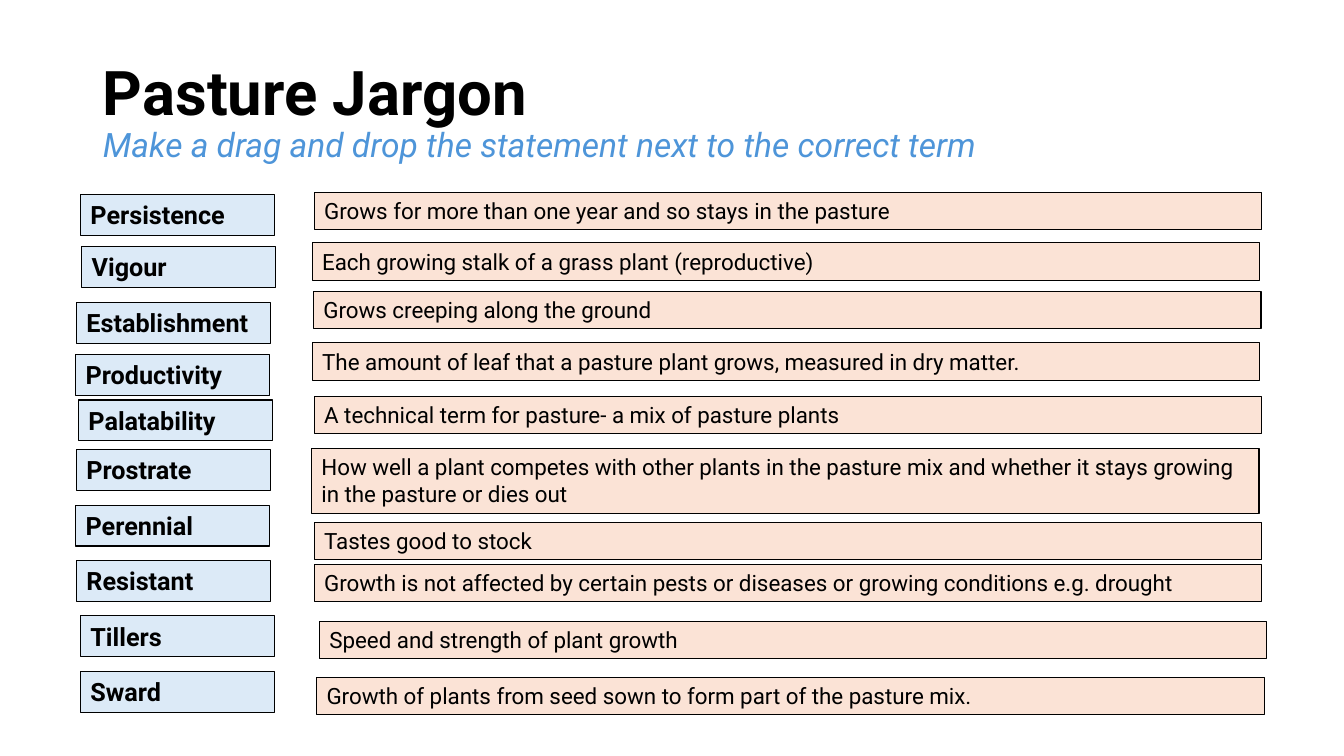
from dataclasses import dataclass

from pptx import Presentation
from pptx.dml.color import RGBColor
from pptx.enum.shapes import MSO_SHAPE as Shape
from pptx.enum.text import MSO_ANCHOR as Anchor
from pptx.enum.text import MSO_AUTO_SIZE as AutoSize
from pptx.enum.text import PP_ALIGN as Align
from pptx.util import Cm, Pt

# Content
TITLE = "Pasture Jargon"
INSTRUCTION = "Make a drag and drop the statement next to the correct term"

# Loose cards to drag: text, left and top in cm
TERMS = [
    ("Persistence", 2.03, 4.9),
    ("Vigour", 2.06, 6.22),
    ("Establishment", 1.93, 7.62),
    ("Productivity", 1.91, 8.94),
    ("Palatability", 1.98, 10.08),
    ("Prostrate", 1.93, 11.33),
    ("Perennial", 1.91, 12.73),
    ("Resistant", 1.93, 14.12),
    ("Tillers", 2.03, 15.52),
    ("Sward", 2.03, 16.92),
]

# Statement cards: text, left and top in cm, number of lines
STATEMENTS = [
    ("Grows for more than one year and so stays in the pasture", 7.92, 4.85, 1),
    ("Each growing stalk of a grass plant (reproductive)", 7.87, 6.12, 1),
    ("Grows creeping along the ground", 7.9, 7.34, 1),
    ("The amount of leaf that a pasture plant grows, measured in dry matter.", 7.87, 8.64, 1),
    ("A technical term for pasture- a mix of pasture plants", 7.92, 9.98, 1),
    ("How well a plant competes with other plants in the pasture mix and "
     "whether it stays growing in the pasture or dies out", 7.85, 11.3, 2),
    ("Tastes good to stock", 7.92, 13.16, 1),
    ("Growth is not affected by certain pests or diseases or growing "
     "conditions e.g. drought", 7.92, 14.22, 1),
    ("Speed and strength of plant growth", 8.05, 15.65, 1),
    ("Growth of plants from seed sown to form part of the pasture mix.", 7.98, 17.07, 1),
]

TERM_WIDTH, TERM_HEIGHT = 4.88, 1.03
STATEMENT_WIDTH = 23.88
STATEMENT_HEIGHT, EXTRA_LINE = 0.94, 0.69


@dataclass(frozen=True)
class Theme:
    font: str = "Roboto"
    text: RGBColor = RGBColor(0x00, 0x00, 0x00)
    instruction: RGBColor = RGBColor(0x4E, 0x95, 0xD9)
    term_fill: RGBColor = RGBColor(0xDC, 0xEA, 0xF7)
    statement_fill: RGBColor = RGBColor(0xFB, 0xE3, 0xD6)
    title_size: Pt = Pt(44)
    instruction_size: Pt = Pt(24)
    term_size: Pt = Pt(18)
    statement_size: Pt = Pt(16)
    outline: Pt = Pt(0.75)


THEME = Theme()


def add_run(paragraph, text, size, color=THEME.text, bold=False, italic=False):
    run = paragraph.add_run()
    run.text = text
    font = run.font
    font.name, font.size = THEME.font, size
    font.bold, font.italic = bold, italic
    font.color.rgb = color


def add_card(slide, text, box, fill, size, bold=False):
    card = slide.shapes.add_shape(Shape.RECTANGLE, *(Cm(length) for length in box))
    card.shadow.inherit = False
    card.fill.solid()
    card.fill.fore_color.rgb = fill
    card.line.color.rgb = THEME.text
    card.line.width = THEME.outline
    frame = card.text_frame
    frame.word_wrap = True
    frame.auto_size = AutoSize.SHAPE_TO_FIT_TEXT
    frame.vertical_anchor = Anchor.TOP
    paragraph = frame.paragraphs[0]
    paragraph.alignment = Align.LEFT
    add_run(paragraph, text, size, bold=bold)


def add_title(slide):
    title = slide.shapes.title
    title.left, title.top = Cm(2.34), Cm(1.02)
    title.width, title.height = Cm(29.21), Cm(3.68)
    frame = title.text_frame
    frame.word_wrap = True
    frame.auto_size = AutoSize.NONE
    frame.vertical_anchor = Anchor.MIDDLE
    paragraph = frame.paragraphs[0]
    paragraph.alignment = Align.LEFT
    paragraph.line_spacing = 0.9
    paragraph.space_before = Pt(0)
    add_run(paragraph, TITLE, THEME.title_size, bold=True)
    paragraph.add_line_break()
    add_run(paragraph, INSTRUCTION, THEME.instruction_size, THEME.instruction, italic=True)


def main():
    presentation = Presentation()
    presentation.slide_width, presentation.slide_height = Cm(33.87), Cm(19.05)
    slide = presentation.slides.add_slide(presentation.slide_layouts[5])

    # Title and instruction
    add_title(slide)

    # Terms on the left
    for text, left, top in TERMS:
        add_card(slide, text, (left, top, TERM_WIDTH, TERM_HEIGHT),
                 THEME.term_fill, THEME.term_size, bold=True)

    # Statements on the right
    for text, left, top, lines in STATEMENTS:
        height = STATEMENT_HEIGHT + (lines - 1) * EXTRA_LINE
        add_card(slide, text, (left, top, STATEMENT_WIDTH, height),
                 THEME.statement_fill, THEME.statement_size)

    presentation.save("out.pptx")


if __name__ == "__main__":
    main()
